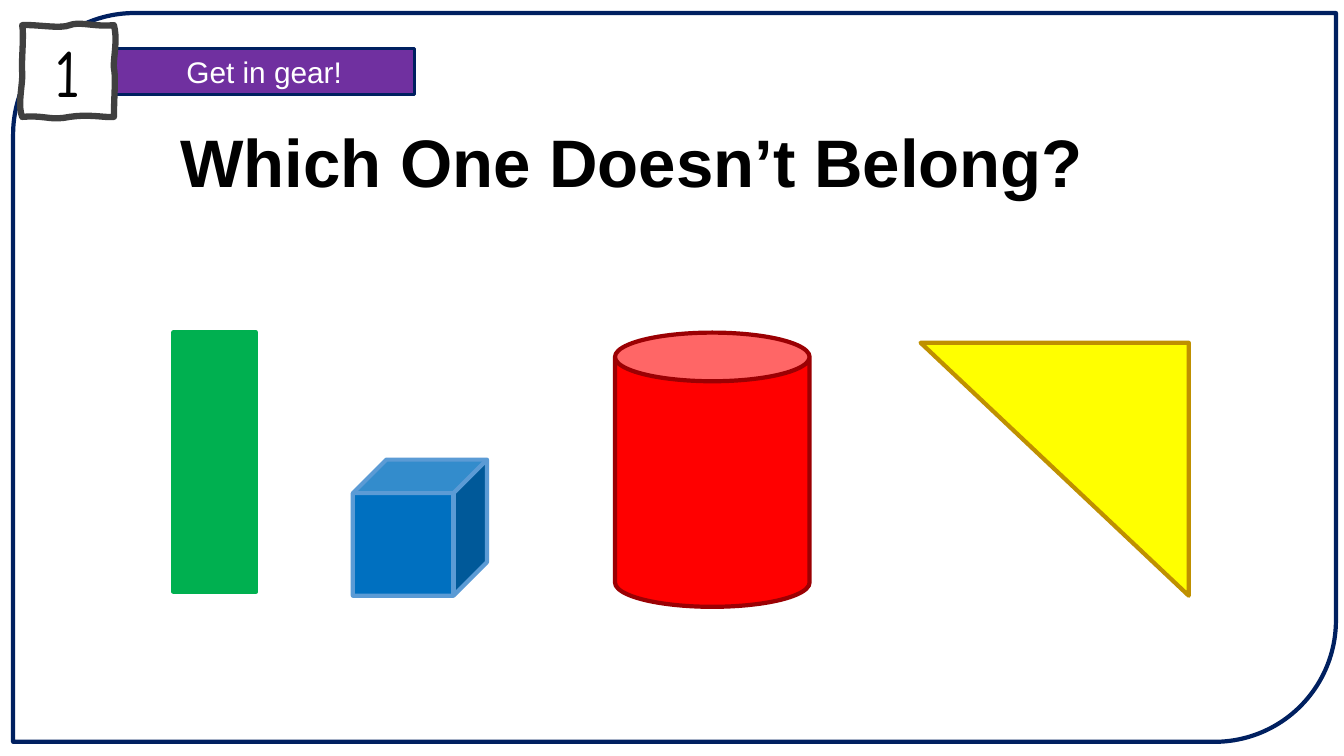
from pptx import Presentation
from pptx.dml.color import RGBColor
from pptx.enum import shapes as s, text as t
from pptx.util import Inches, Pt

COLOURS = {
    "navy": "002060", "purple": "7030A0", "white": "FFFFFF", "black": "000000",
    "charcoal": "404040", "red": "FF0000", "dark_red": "9B0003",
    "blue": "0070C0", "light_blue": "5B9BD5", "yellow": "FFFF00",
    "gold": "BF9000", "green": "00B050",
}
CARD_START = (0.22, 0.25)
CARD_CURVES = [
    ((0.36, 0.24), (0.59, 0.29), (0.69, 0.25)),
    ((0.8, 0.21), (0.93, 0.27), (1.13, 0.25)),
    ((1.17, 0.4), (1.12, 0.59), (1.13, 0.68)),
    ((1.15, 0.77), (1.13, 0.95), (1.13, 1.16)),
    ((1.03, 1.17), (0.9, 1.13), (0.69, 1.16)),
    ((0.49, 1.2), (0.45, 1.14), (0.22, 1.16)),
    ((0.17, 1.04), (0.23, 0.82), (0.22, 0.72)),
    ((0.21, 0.62), (0.24, 0.35), (0.22, 0.25)),
]
CURVE_STEPS = 10


def colour(name):
    return RGBColor.from_string(COLOURS[name])


def paint(shape, fill, line, width):
    shape.shadow.inherit = False
    if fill:
        shape.fill.solid()
        shape.fill.fore_color.rgb = colour(fill)
    else:
        shape.fill.background()
    shape.line.color.rgb = colour(line)
    shape.line.width = Pt(width)
    return shape


def add_solid(slide, kind, box, fill, line, width=3, rotation=0):
    solid = slide.shapes.add_shape(kind, *map(Inches, box))
    solid.rotation = rotation
    return paint(solid, fill, line, width)


def write(shape, words, size, font="Arial", ink="black", bold=False,
          align=t.PP_ALIGN.LEFT, anchor=t.MSO_ANCHOR.MIDDLE):
    frame = shape.text_frame
    frame.word_wrap = True
    frame.vertical_anchor = anchor
    paragraph = frame.paragraphs[0]
    paragraph.alignment = align
    run = paragraph.add_run()
    run.text = words
    run.font.name = font
    run.font.size = Pt(size)
    run.font.bold = bold
    run.font.color.rgb = colour(ink)


def curve_points(start, curves):
    """Return points along a chain of cubic curves."""
    points = []
    for first, second, end in curves:
        for step in range(1, CURVE_STEPS + 1):
            u = step / CURVE_STEPS
            v = 1 - u
            points.append(tuple(
                Inches(v**3 * a + 3 * v * v * u * b + 3 * v * u * u * c + u**3 * d)
                for a, b, c, d in zip(start, first, second, end)))
        start = end
    return points


def add_number_card(slide, number):
    builder = slide.shapes.build_freeform(*map(Inches, CARD_START))
    builder.add_line_segments(curve_points(CARD_START, CARD_CURVES), close=True)
    card = paint(builder.convert_to_shape(), "white", "charcoal", 4.5)
    write(card, number, 48, font="Comic Neue", align=t.PP_ALIGN.CENTER)


def add_title(slide, words, box):
    title = slide.shapes.add_textbox(*map(Inches, box))
    write(title, words, 48, bold=True, anchor=t.MSO_ANCHOR.TOP)


def main():
    deck = Presentation()
    deck.slide_width, deck.slide_height = Inches(13.33), Inches(7.5)
    slide = deck.slides.add_slide(deck.slide_layouts[6])
    kinds = s.MSO_SHAPE

    add_solid(slide, kinds.ROUND_2_DIAG_RECTANGLE, (0.13, 0.13, 13.12, 7.23),
              None, "navy")
    banner = add_solid(slide, kinds.RECTANGLE, (1.13, 0.48, 2.98, 0.46),
                       "purple", "navy", 2.25)
    write(banner, "Get in gear!", 21.3, ink="white", align=t.PP_ALIGN.CENTER)
    add_number_card(slide, "1")

    add_solid(slide, kinds.CAN, (6.1, 3.3, 1.93, 2.72), "red", "dark_red")
    add_solid(slide, kinds.CUBE, (3.5, 4.56, 1.33, 1.35), "blue", "light_blue")
    add_solid(slide, kinds.RIGHT_TRIANGLE, (9.13, 3.4, 2.66, 2.51),
              "yellow", "gold", rotation=180)
    add_solid(slide, kinds.RECTANGLE, (1.72, 3.3, 0.82, 2.57), "green", "green")
    add_title(slide, "Which One Doesn’t Belong?", (1.69, 1.14, 10, 0.91))

    deck.save("out.pptx")


if __name__ == "__main__":
    main()
